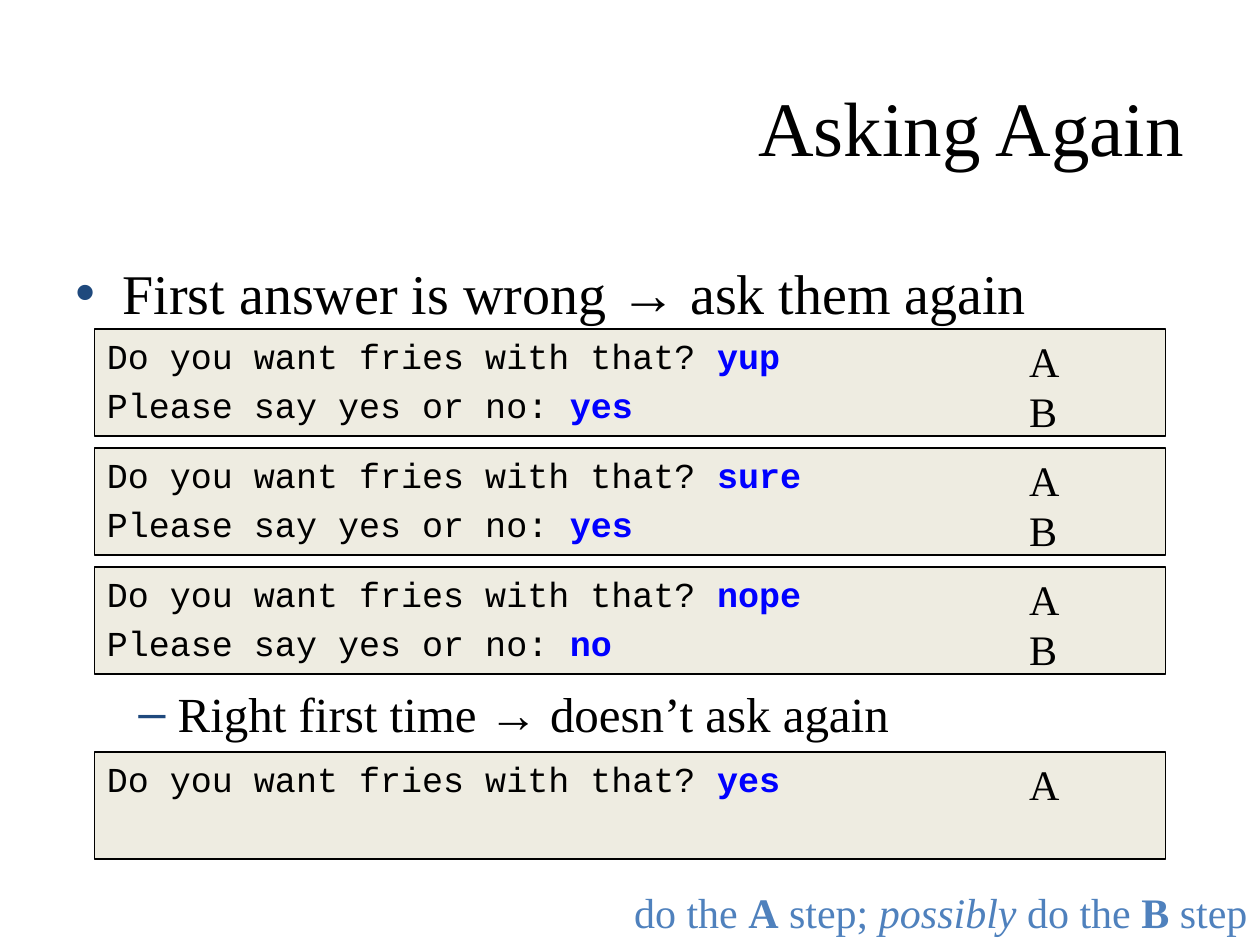
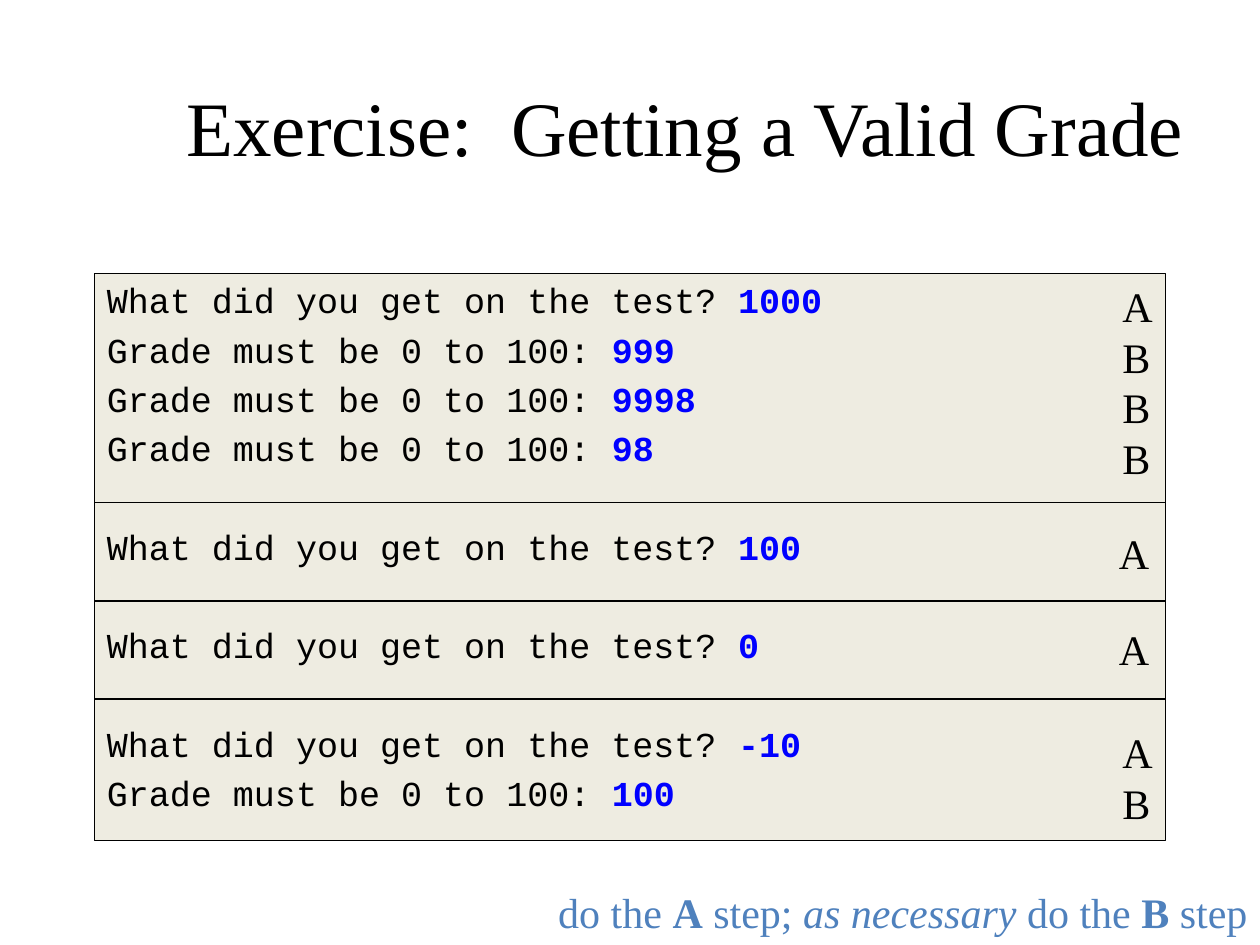
import pptx
import pptx.dml.color
import pptx.enum.shapes
import pptx.enum.text
import pptx.oxml.ns
import pptx.util
from lxml import etree

Pt = pptx.util.Pt
ALIGN = pptx.enum.text.PP_ALIGN
ANCHOR = pptx.enum.text.MSO_ANCHOR

SERIF, MONO = "Times New Roman", "Courier New"
BLACK, BLUE, PANEL = "000000", "0000FF", "EEECE1"
ACCENT, BULLET = "4F81BD", "1F497D"
PANEL_LEFT, PANEL_WIDTH = 54, 612
CODE_GAP, CODE_PITCH = 4.25, 28

FRIES, YES_NO = "Do you want fries with that? ", "Please say yes or no: "
TEST, RANGE = "What did you get on the test? ", "Grade must be 0 to 100: "


def rgb(hex_color):
    return pptx.dml.color.RGBColor.from_string(hex_color)


def add_run(p, text, size, color=BLACK, font=SERIF, bold=False, italic=False):
    r = p.add_run()
    r.text = text
    r.font.name, r.font.size = font, Pt(size)
    r.font.bold, r.font.italic = bold, italic
    r.font.color.rgb = rgb(color)


def paragraph(tf, index):
    return tf.paragraphs[0] if index == 0 else tf.add_paragraph()


def add_text_box(slide, left, top, width, height, wrap=True):
    tf = slide.shapes.add_textbox(Pt(left), Pt(top), Pt(width), Pt(height)).text_frame
    tf.word_wrap = wrap
    return tf


def add_title_slide(prs, title):
    slide = prs.slides.add_slide(prs.slide_layouts[5])
    sp = slide.shapes.title
    sp.left, sp.top, sp.width, sp.height = Pt(36), Pt(21.2), Pt(648), Pt(80.6)
    tf = sp.text_frame
    tf.vertical_anchor = ANCHOR.BOTTOM
    p = tf.paragraphs[0]
    p.alignment = ALIGN.RIGHT
    add_run(p, title, 44)
    return slide


def add_bullet(p, char, size, left, hang, text):
    pPr = p._p.get_or_add_pPr()
    pPr.set("marL", str(Pt(left)))
    pPr.set("indent", str(-Pt(hang)))
    qn = pptx.oxml.ns.qn
    color = etree.SubElement(pPr, qn("a:buClr"))
    etree.SubElement(color, qn("a:srgbClr"), val=BULLET)
    etree.SubElement(pPr, qn("a:buFont"), typeface="Arial")
    etree.SubElement(pPr, qn("a:buChar"), char=char)
    add_run(p, text, size)


def add_console(slide, top, height, sessions, line_width=1):
    """Draw a panel of (prompt, answer) lines; sessions are a line apart."""
    sp = slide.shapes.add_shape(pptx.enum.shapes.MSO_SHAPE.RECTANGLE,
                                Pt(PANEL_LEFT), Pt(top), Pt(PANEL_WIDTH), Pt(height))
    sp.shadow.inherit = False
    sp.fill.solid()
    sp.fill.fore_color.rgb = rgb(PANEL)
    sp.line.color.rgb = rgb(BLACK)
    sp.line.width = Pt(line_width)
    tf = sp.text_frame
    tf.word_wrap = True
    tf.vertical_anchor = ANCHOR.TOP
    tf.margin_top = Pt(3)
    count = 0
    for session in sessions:
        for i, (prompt, answer) in enumerate(session):
            p = paragraph(tf, count)
            p.alignment = ALIGN.LEFT
            if count:
                p.space_before = Pt(CODE_GAP if i else CODE_GAP + CODE_PITCH)
            add_run(p, prompt, 20, font=MONO)
            add_run(p, answer, 20, BLUE, MONO, bold=True)
            count += 1


def add_step_labels(slide, left, top, steps):
    tf = add_text_box(slide, left, top, 32.4, 7.9 + 28.8 * len(steps), wrap=False)
    for i, step in enumerate(steps):
        p = paragraph(tf, i)
        p.line_spacing = Pt(28.8)
        add_run(p, step, 24)


def add_divider(slide, y):
    line = slide.shapes.add_connector(pptx.enum.shapes.MSO_CONNECTOR.STRAIGHT,
                                      Pt(PANEL_LEFT), Pt(y),
                                      Pt(PANEL_LEFT + PANEL_WIDTH), Pt(y))
    line.line.color.rgb = rgb(BLACK)
    line.line.width = Pt(1)
    etree.SubElement(line._element.spPr, pptx.oxml.ns.qn("a:effectLst"))


def add_summary(slide, how_often):
    p = add_text_box(slide, 0, 503.3, 720, 36.7).paragraphs[0]
    p.alignment = ALIGN.RIGHT
    p.line_spacing = Pt(28.8)
    for text, bold, italic in (("do the ", False, False), ("A", True, False),
                               (" step; ", False, False), (how_often, False, True),
                               (" do the ", False, False), ("B", True, False),
                               (" step", False, False)):
        add_run(p, text, 24, ACCENT, bold=bold, italic=italic)


def build_asking_again(prs):
    slide = add_title_slide(prs, "Asking Again")

    # Bullets, spaced to leave room for three panels
    tf = add_text_box(slide, 36, 144.4, 648, 365)
    add_bullet(tf.paragraphs[0], "•", 32, 27, 27,
               "First answer is wrong → ask them again")
    p = tf.add_paragraph()
    add_bullet(p, "–", 28, 58.5, 22.5, "Right first time → doesn’t ask again")
    p.space_before = Pt(204)

    # Sample dialogues
    answers = (("yup", "yes"), ("sure", "yes"), ("nope", "no"))
    dialogues = [(188 + 68 * i, [(FRIES, first), (YES_NO, second)])
                 for i, (first, second) in enumerate(answers)]
    dialogues.append((429.8, [(FRIES, "yes")]))
    for top, lines in dialogues:
        add_console(slide, top, 61.2, [lines])
        add_step_labels(slide, 581, top, "AB"[:len(lines)])

    add_summary(slide, "possibly")


def build_valid_grade(prs):
    slide = add_title_slide(prs, "Exercise:  Getting a Valid Grade")

    # One panel with four sessions
    add_console(slide, 156.2, 324, [
        [(TEST, "1000"), (RANGE, "999"), (RANGE, "9998"), (RANGE, "98")],
        [(TEST, "100")],
        [(TEST, "0")],
        [(TEST, "-10"), (RANGE, "100")],
    ], line_width=0.75)
    for i in range(3):
        add_divider(slide, 287.2 + 56.2 * i)

    # Steps taken in each session
    for left, top, steps in ((634.3, 157, "ABBB"), (632.2, 298, "A"),
                             (632.2, 352.8, "A"), (634.3, 411.8, "AB")):
        add_step_labels(slide, left, top, steps)

    add_summary(slide, "as necessary")


def main():
    prs = pptx.Presentation()
    prs.slide_width, prs.slide_height = Pt(720), Pt(540)
    build_asking_again(prs)
    build_valid_grade(prs)
    prs.save("out.pptx")


if __name__ == "__main__":
    main()
